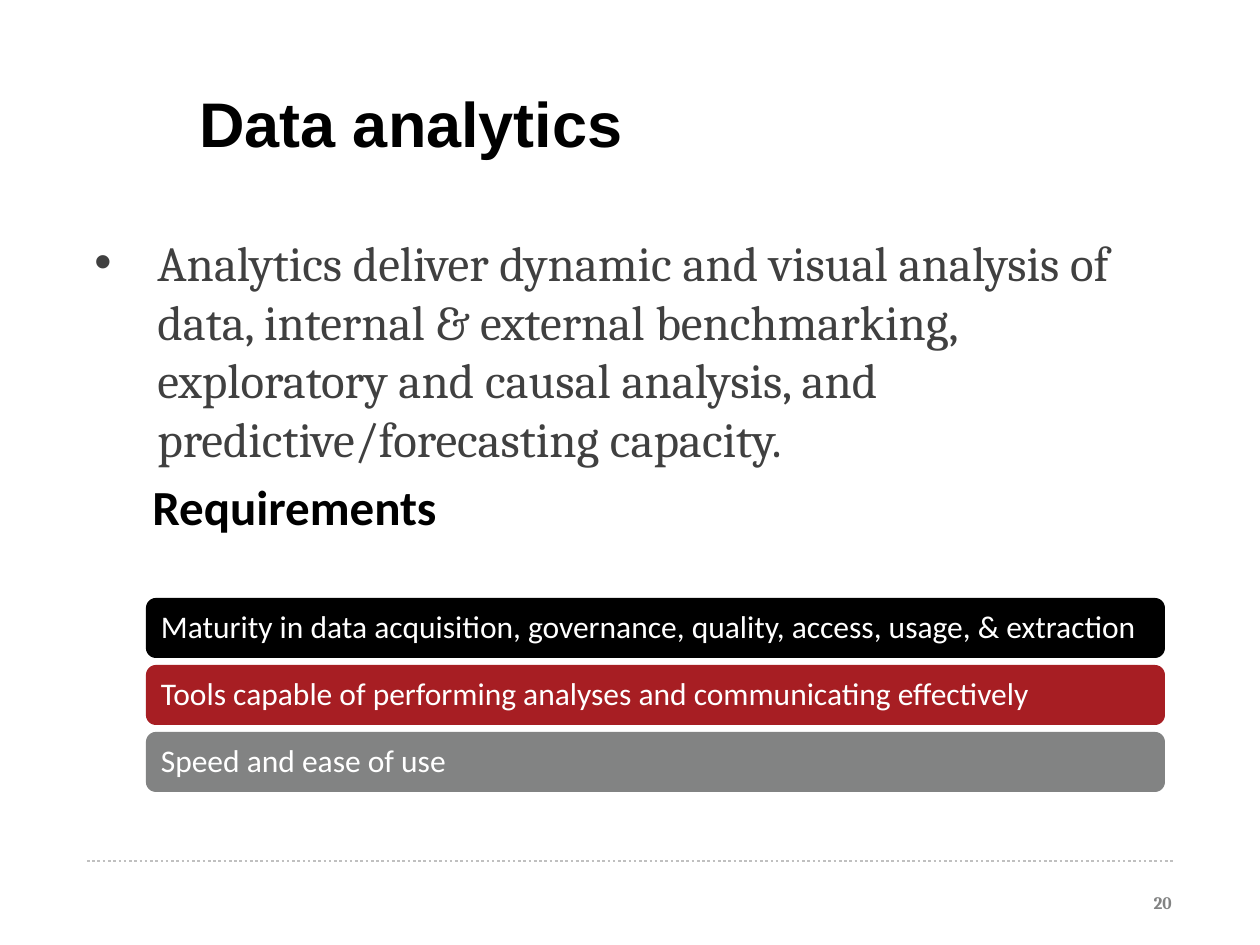
"""Build the Data analytics slide with its three requirement bars."""
from lxml import etree
from pptx import Presentation, util as u
from pptx.dml.color import RGBColor
from pptx.enum import dml, shapes, text
from pptx.oxml.ns import qn

SCALE = 914400 / 126
COLOURS = {"black": "000000", "red": "A71E23", "grey": "828383",
           "body": "404040", "rule": "C0C0C0", "white": "FFFFFF"}
TEXTS = [
    ("Data analytics", (82, 93, 1101, 113),
     {"name": "Arial", "size": 36, "bold": True, "colour": "black"},
     {"line_spacing": 0.8}, {"margin_left": 117}),
    ("Analytics deliver dynamic and visual analysis of data, internal & external "
     "benchmarking, exploratory and causal analysis, and predictive/forecasting capacity.",
     (82, 226, 1101, 570),
     {"name": "Cambria", "size": 28, "colour": "body"}, {}, {}),
    ("20", (900, 886, 284, 50),
     {"name": "Cambria", "size": 10, "bold": True, "colour": "grey"},
     {"alignment": text.PP_ALIGN.RIGHT}, {}),
    ("Requirements", (140, 470, 312, 72),
     {"name": "Calibri", "size": 28, "bold": True, "colour": "black"},
     {}, {"word_wrap": False}),
]
BULLETED = 1
BARS = [
    ("Maturity in data acquisition, governance, quality, access, usage, & extraction", "black"),
    ("Tools capable of performing analyses and communicating effectively", "red"),
    ("Speed and ease of use", "grey"),
]
BAR_LEFT, BAR_TOP, BAR_WIDTH, BAR_HEIGHT, BAR_PITCH = 146, 598, 1019, 60, 67
BAR_FONT = {"name": "Calibri", "size": 18, "colour": "white"}
BAR_FRAME = {"margin_left": 12, "margin_right": 12, "margin_top": 9, "margin_bottom": 9,
             "vertical_anchor": text.MSO_ANCHOR.MIDDLE}
BAR_PARA = {"alignment": text.PP_ALIGN.LEFT, "line_spacing": 0.9}
RULE = (87, 861, 1174, 861)


def px(*lengths):
    return [u.Emu(round(length * SCALE)) for length in lengths]


def rgb(name):
    return RGBColor.from_string(COLOURS[name])


def add_bullet(para):
    properties = para._p.get_or_add_pPr()
    indent = px(63)[0]
    properties.set("marL", str(indent))
    properties.set("indent", str(-indent))
    etree.SubElement(properties, qn("a:buFont")).set("typeface", "Arial")
    etree.SubElement(properties, qn("a:buChar")).set("char", "•")


def write(shape, words, font, para_format, frame_format, bulleted=False):
    frame = shape.text_frame
    frame.word_wrap = True
    for key, value in frame_format.items():
        setattr(frame, key, px(value)[0] if key.startswith("margin") else value)
    para = frame.paragraphs[0]
    if bulleted:
        add_bullet(para)
    for key, value in para_format.items():
        setattr(para, key, value)
    span = para.add_run()
    span.text = words
    for key, value in font.items():
        if key == "colour":
            span.font.color.rgb = rgb(value)
        else:
            setattr(span.font, key, u.Pt(value) if key == "size" else value)


def add_rule(page):
    rule = page.shapes.add_connector(shapes.MSO_CONNECTOR.STRAIGHT, *px(*RULE))
    rule.line.color.rgb = rgb("rule")
    rule.line.width = u.Pt(1.5)
    rule.line.dash_style = dml.MSO_LINE.ROUND_DOT
    etree.SubElement(rule._element.spPr, qn("a:effectLst"))


def add_bar(page, row, words, colour):
    place = px(BAR_LEFT, BAR_TOP + row * BAR_PITCH, BAR_WIDTH, BAR_HEIGHT)
    bar = page.shapes.add_shape(shapes.MSO_SHAPE.ROUNDED_RECTANGLE, *place)
    bar.shadow.inherit = False
    bar.fill.solid()
    bar.fill.fore_color.rgb = rgb(colour)
    bar.line.fill.background()
    write(bar, words, BAR_FONT, BAR_PARA, BAR_FRAME)


def main():
    deck = Presentation()
    deck.slide_width, deck.slide_height = px(1260, 945)
    page = deck.slides.add_slide(deck.slide_layouts[6])
    add_rule(page)
    for index, (words, place, font, para_format, frame_format) in enumerate(TEXTS):
        box = page.shapes.add_textbox(*px(*place))
        write(box, words, font, para_format, frame_format, index == BULLETED)
    for row, (words, colour) in enumerate(BARS):
        add_bar(page, row, words, colour)
    deck.save("out.pptx")


if __name__ == "__main__":
    main()
